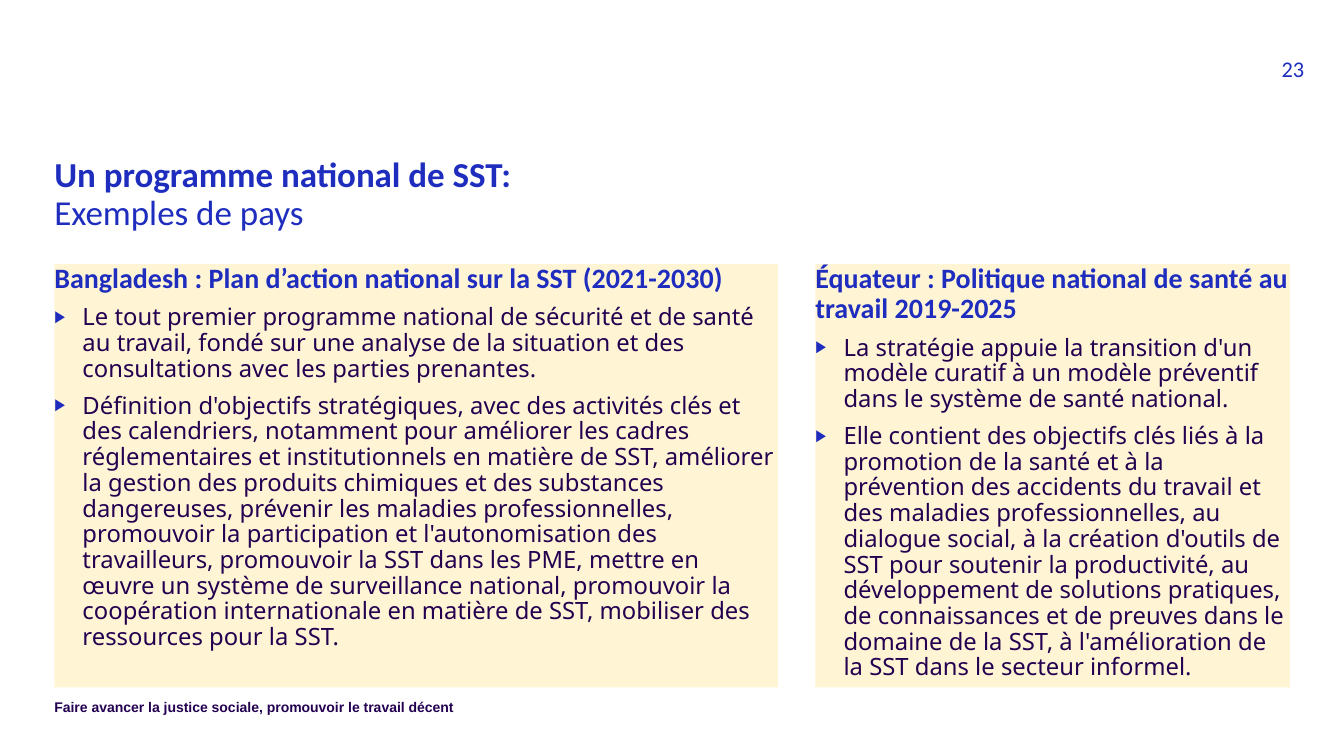
import pptx
import pptx.dml.color
import pptx.enum.text
import pptx.oxml
import pptx.oxml.ns
import pptx.util
from pptx.util import Cm, Pt

BLUE, DARK, CREAM = "1E2DBE", "230050", "FFF5D5"
LEFT = 1.37

HEAD = {"size": Pt(20), "name": "Calibri", "bold": True, "color": BLUE}
BODY = {"size": Pt(17), "name": "Noto Sans", "bold": False, "color": DARK}
TITLE = {"size": Pt(25), "name": "Calibri", "bold": True, "color": BLUE}
FOOT = {"size": Pt(10), "name": "Arial", "bold": True, "color": DARK}
PAGE = {"size": Pt(16), "name": "Calibri", "bold": False, "color": BLUE}
TIGHT = {"line_spacing": 0.9}
LIST = {"line_spacing": 0.9, "space_before": Pt(4), "space_after": Pt(4)}

PANELS = [
    ((LEFT, 6.65, 18.24, 10.67),
     "Bangladesh : Plan d’action national sur la SST (2021-2030)",
     ["Le tout premier programme national de sécurité et de santé au travail, "
      "fondé sur une analyse de la situation et des consultations avec les "
      "parties prenantes.",
      "Définition d'objectifs stratégiques, avec des activités clés et des "
      "calendriers, notamment pour améliorer les cadres réglementaires et "
      "institutionnels en matière de SST, améliorer la gestion des produits "
      "chimiques et des substances dangereuses, prévenir les maladies "
      "professionnelles, promouvoir la participation et l'autonomisation des "
      "travailleurs, promouvoir la SST dans les PME, mettre en œuvre un système "
      "de surveillance national, promouvoir la coopération internationale en "
      "matière de SST, mobiliser des ressources pour la SST."]),
    ((20.55, 6.65, 11.96, 10.67),
     "Équateur : Politique national de santé au travail 2019-2025",
     ["La stratégie appuie la transition d'un modèle curatif à un modèle "
      "préventif dans le système de santé national.",
      "Elle contient des objectifs clés liés à la promotion de la santé et à la "
      "prévention des accidents du travail et des maladies professionnelles, au "
      "dialogue social, à la création d'outils de SST pour soutenir la "
      "productivité, au développement de solutions pratiques, de connaissances "
      "et de preuves dans le domaine de la SST, à l'amélioration de la SST dans "
      "le secteur informel."]),
]


def paint(color, code):
    color.rgb = pptx.dml.color.RGBColor.from_string(code)


def apply(item, style):
    for key, value in style.items():
        if key == "color":
            paint(item.color, value)
        else:
            setattr(item, key, value)


def add_box(slide, box):
    shape = slide.shapes.add_textbox(*map(Cm, box))
    apply(shape.text_frame, {
        "word_wrap": True, "margin_left": 0, "margin_right": 0,
        "margin_top": 0, "margin_bottom": 0,
        "vertical_anchor": pptx.enum.text.MSO_ANCHOR.TOP})
    return shape


def add_run(para, text, font):
    run = para.add_run()
    run.text = text
    apply(run.font, font)


def add_mark(para):
    props = para._p.get_or_add_pPr()
    props.set("marL", str(Cm(0.71)))
    props.set("indent", str(Cm(-0.71)))
    space = pptx.oxml.ns.nsdecls("a")
    for part in (f'<a:buClr {space}><a:srgbClr val="{BLUE}"/></a:buClr>',
                 f'<a:buSzPct {space} val="70000"/>',
                 f'<a:buFont {space} typeface="Arial"/>',
                 f'<a:buChar {space} char="▶"/>'):
        props.append(pptx.oxml.parse_xml(part))


def add_title(slide, box):
    para = add_box(slide, box).text_frame.paragraphs[0]
    apply(para, TIGHT)
    add_run(para, "Un programme national de SST:", TITLE)
    para.add_line_break()
    add_run(para, "Exemples de pays", {**TITLE, "bold": False})


def add_panel(slide, box, head, points):
    shape = add_box(slide, box)
    shape.fill.solid()
    paint(shape.fill.fore_color, CREAM)
    frame = shape.text_frame
    para = frame.paragraphs[0]
    apply(para, {**LIST, "space_before": Pt(0)})
    add_run(para, head, HEAD)
    for point in points:
        para = frame.add_paragraph()
        apply(para, {**LIST, "level": 1})
        add_mark(para)
        add_run(para, point, BODY)


def add_note(slide, box, text, font, align):
    para = add_box(slide, box).text_frame.paragraphs[0]
    para.alignment = align
    add_run(para, text, font)


def main():
    deck = pptx.Presentation()
    apply(deck, {"slide_width": Cm(33.87), "slide_height": Cm(19.05)})
    slide = deck.slides.add_slide(deck.slide_layouts[6])
    side = pptx.enum.text.PP_ALIGN
    add_title(slide, (LEFT, 3.96, 31.14, 2))
    for box, head, points in PANELS:
        add_panel(slide, box, head, points)
    add_note(slide, (LEFT, 17.6, 15.57, 0.5),
             "Faire avancer la justice sociale, promouvoir le travail décent",
             FOOT, side.LEFT)
    add_note(slide, (31.37, 1.4, 1.5, 0.79), "23", PAGE, side.RIGHT)
    deck.save("out.pptx")


if __name__ == "__main__":
    main()
